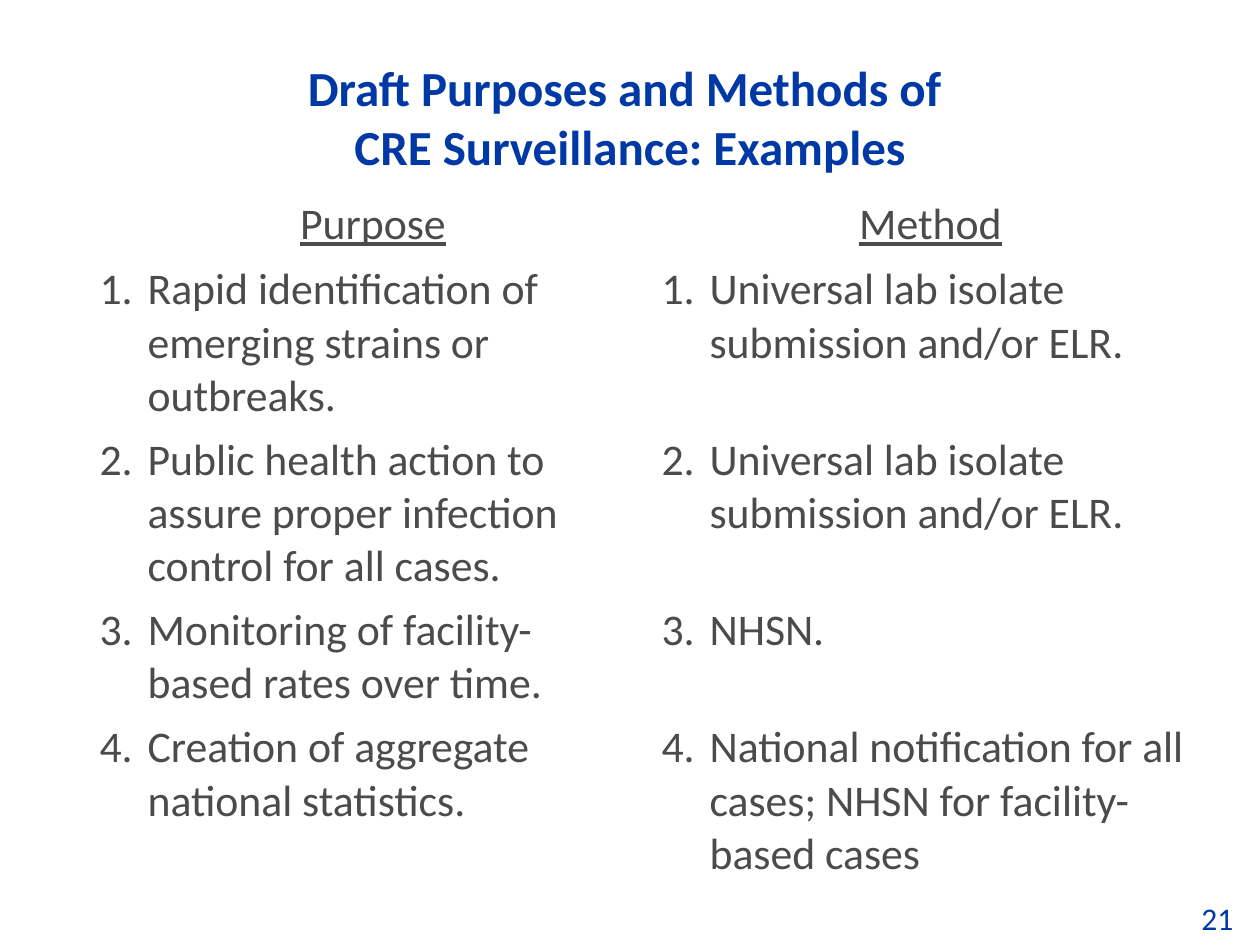
from pptx import Presentation
from pptx.dml.color import RGBColor
from pptx.enum.text import MSO_ANCHOR, PP_ALIGN
from pptx.oxml.xmlchemy import OxmlElement
from pptx.util import Pt

CENTER = PP_ALIGN.CENTER
MIDDLE = MSO_ANCHOR.MIDDLE
BLUE = RGBColor(0x00, 0x39, 0xA6)
GRAY = RGBColor(0x4B, 0x4B, 0x4B)

TITLE = "Draft Purposes and Methods of \vCRE Surveillance: Examples"
HEADS = ["Purpose", "Method"]
ROWS = [
    ("Rapid identification of emerging strains or outbreaks.",
     "Universal lab isolate submission and/or ELR."),
    ("Public health action to assure proper infection control for all cases.",
     "Universal lab isolate submission and/or ELR."),
    ("Monitoring of facility-based rates over time.", "NHSN."),
    ("Creation of aggregate national statistics.",
     "National notification for all cases; NHSN for facility-based cases"),
]
PAGE = "21"

COLS = [562, 553]
HEIGHTS = [58, 150, 150, 105, 150]
INDENT = 48


def px(n):
    return round(n * 914400 / 126)


def style(font, size, color, **extra):
    font.color.rgb = color
    values = {"name": "Calibri", "size": Pt(size), **extra}
    for key, value in values.items():
        setattr(font, key, value)


def place(shape, *box):
    for key, value in zip(("left", "top", "width", "height"), box):
        setattr(shape, key, px(value))


def number(para, start):
    """Give the paragraph a hanging automatic number."""
    props = para._p.get_or_add_pPr()
    props.set("marL", str(px(INDENT)))
    props.set("indent", str(-px(INDENT)))
    mark = OxmlElement("a:buAutoNum")
    mark.set("type", "arabicPeriod")
    mark.set("startAt", str(start))
    props.append(mark)


def add_run(para, text, **extra):
    run = para.add_run()
    run.text = text
    style(run.font, 25, GRAY, **extra)


def add_title(slide):
    title = slide.shapes.title
    place(title, 87, 25, 1086, 183)
    frame = title.text_frame
    frame.text = TITLE
    frame.vertical_anchor = MIDDLE
    para = frame.paragraphs[0]
    para.alignment = CENTER
    for run in para.runs:
        style(run.font, 28, BLUE, bold=True)


def add_grid(slide):
    box = [px(n) for n in (87, 192, sum(COLS), sum(HEIGHTS))]
    grid = slide.shapes.add_table(len(HEIGHTS), len(COLS), *box).table
    grid.first_row = grid.horz_banding = False
    for col, width in zip(grid.columns, COLS):
        col.width = px(width)
    for row, height in zip(grid.rows, HEIGHTS):
        row.height = px(height)
    for r, texts in enumerate([HEADS, *ROWS]):
        for c, text in enumerate(texts):
            cell = grid.cell(r, c)
            cell.fill.background()
            para = cell.text_frame.paragraphs[0]
            if r == 0:
                para.alignment = CENTER
                add_run(para, " ")
                add_run(para, text, underline=True)
            else:
                number(para, r)
                add_run(para, text)


def add_page(slide):
    box = slide.shapes.add_textbox(0, 0, 0, 0)
    place(box, 1189, 893, 71, 52)
    frame = box.text_frame
    frame.word_wrap = True
    frame.text = PAGE
    style(frame.paragraphs[0].runs[0].font, 18, BLUE)


def main():
    deck = Presentation()
    deck.slide_width, deck.slide_height = px(1260), px(945)
    slide = deck.slides.add_slide(deck.slide_layouts[5])
    add_page(slide)
    add_title(slide)
    add_grid(slide)
    deck.save("out.pptx")


if __name__ == "__main__":
    main()
